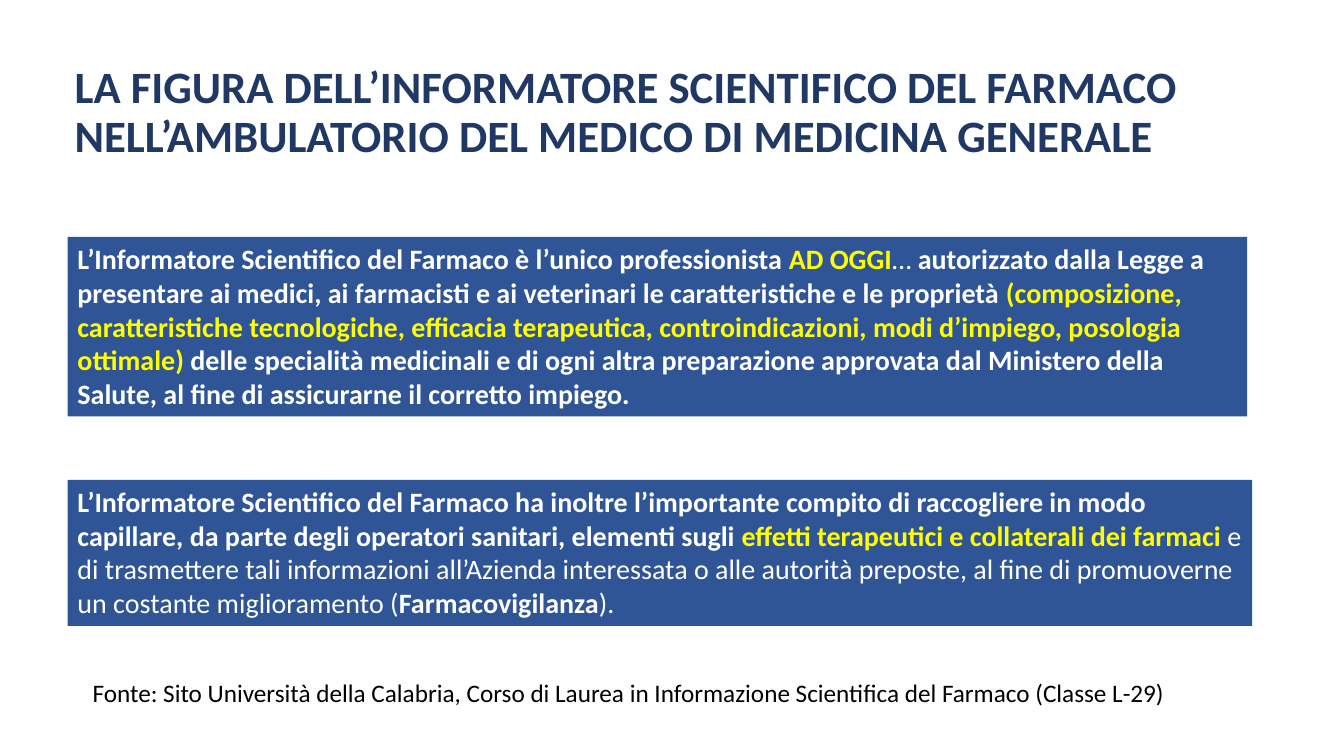
from pptx import Presentation
from pptx.dml.color import RGBColor
from pptx.enum.shapes import MSO_SHAPE
from pptx.enum.text import MSO_ANCHOR, PP_ALIGN
from pptx.util import Inches, Pt

COLORS = {
    "title": "203864",
    "panel": "2F5597",
    "light": "FFFFFF",
    "highlight": "FFFF00",
    "source": "000000",
}

TITLE = ("LA FIGURA DELL’INFORMATORE SCIENTIFICO DEL FARMACO "
         "NELL’AMBULATORIO DEL MEDICO DI MEDICINA GENERALE")
SOURCE = ("Fonte: Sito Università della Calabria, Corso di Laurea in "
          "Informazione Scientifica del Farmaco (Classe L-29)")

# Each piece of panel text: wording, colour, bold
ROLE = [
    ("L’Informatore Scientifico del Farmaco è l’unico professionista ", "light", True),
    ("AD OGGI", "highlight", True),
    ("… ", "light", False),
    ("autorizzato dalla Legge a presentare ai medici, ai farmacisti e ai "
     "veterinari le caratteristiche e le proprietà ", "light", True),
    ("(composizione, caratteristiche tecnologiche, efficacia terapeutica, "
     "controindicazioni, modi d’impiego, posologia ottimale) ", "highlight", True),
    ("delle specialità medicinali e di ogni altra preparazione approvata dal "
     "Ministero della Salute, al fine di assicurarne il corretto impiego.", "light", True),
]
MONITORING = [
    ("L’Informatore Scientifico del Farmaco ha inoltre l’importante compito di "
     "raccogliere in modo capillare, da parte degli operatori sanitari, "
     "elementi sugli ", "light", True),
    ("effetti terapeutici e collaterali dei farmaci ", "highlight", True),
    ("e di trasmettere tali informazioni all’Azienda interessata o alle autorità "
     "preposte, al fine di promuoverne un costante miglioramento (", "light", False),
    ("Farmacovigilanza", "light", True),
    (").", "light", False),
]


def add_span(para, text, size=20, color="light", bold=False):
    span = para.add_run()
    span.text = text
    span.font.name = "Calibri"
    span.font.size = Pt(size)
    span.font.bold = bold
    span.font.color.rgb = RGBColor.from_string(COLORS[color])


def place_title(page, left, top, width, height):
    title = page.shapes.title
    title.left, title.top = Inches(left), Inches(top)
    title.width, title.height = Inches(width), Inches(height)
    frame = title.text_frame
    frame.word_wrap = True
    frame.vertical_anchor = MSO_ANCHOR.MIDDLE
    para = frame.paragraphs[0]
    para.alignment = PP_ALIGN.LEFT
    para.line_spacing = 0.9
    add_span(para, TITLE, size=32, color="title", bold=True)


def add_panel(page, pieces, left, top, width, height):
    panel = page.shapes.add_shape(MSO_SHAPE.RECTANGLE, Inches(left), Inches(top),
                                  Inches(width), Inches(height))
    panel.shadow.inherit = False
    panel.fill.solid()
    panel.fill.fore_color.rgb = RGBColor.from_string(COLORS["panel"])
    panel.line.fill.background()
    frame = panel.text_frame
    frame.word_wrap = True
    frame.vertical_anchor = MSO_ANCHOR.TOP
    para = frame.paragraphs[0]
    para.alignment = PP_ALIGN.LEFT
    for text, color, bold in pieces:
        add_span(para, text, color=color, bold=bold)


def add_source(page, left, top, width, height):
    box = page.shapes.add_textbox(Inches(left), Inches(top), Inches(width), Inches(height))
    box.text_frame.word_wrap = True
    add_span(box.text_frame.paragraphs[0], SOURCE, size=18, color="source")


def main():
    deck = Presentation()
    deck.slide_width, deck.slide_height = Inches(13.33), Inches(7.5)
    page = deck.slides.add_slide(deck.slide_layouts[5])  # title only

    place_title(page, 0.64, 0.4, 11.5, 1.45)
    add_panel(page, ROLE, 0.67, 2.35, 11.7, 1.78)
    add_panel(page, MONITORING, 0.67, 4.76, 11.75, 1.45)
    add_source(page, 0.82, 6.67, 11.14, 0.4)

    deck.save("out.pptx")


if __name__ == "__main__":
    main()
